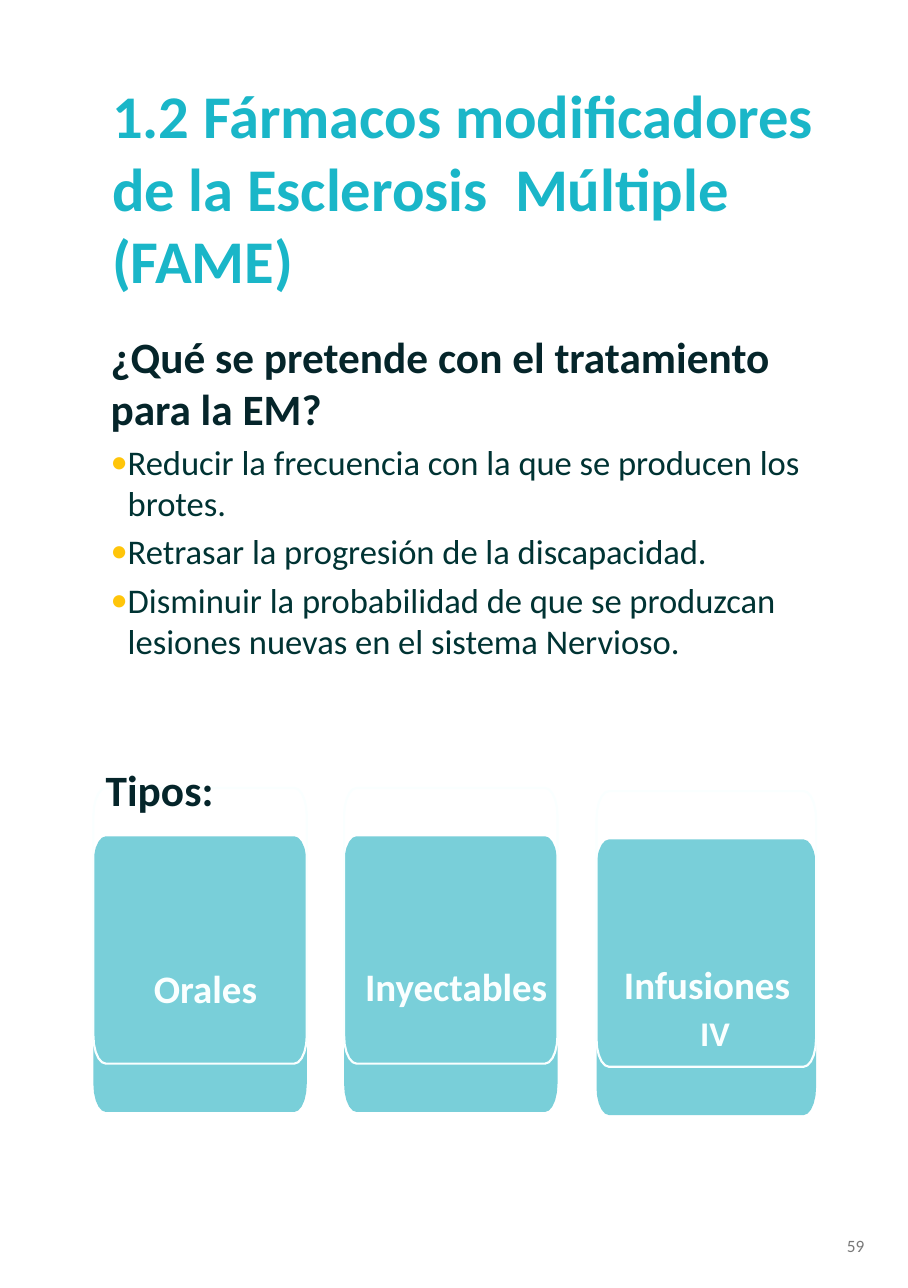
from math import cos, pi, sin

from lxml import etree
from pptx import Presentation
from pptx.dml.color import RGBColor
from pptx.enum.text import MSO_ANCHOR, MSO_AUTO_SIZE, PP_ALIGN
from pptx.oxml.ns import qn
from pptx.util import Inches, Pt

LEFT, CENTER, RIGHT = PP_ALIGN.LEFT, PP_ALIGN.CENTER, PP_ALIGN.RIGHT
TOP, MIDDLE = MSO_ANCHOR.TOP, MSO_ANCHOR.MIDDLE
FIXED = MSO_AUTO_SIZE.NONE

FONT = "Calibri"
TEAL, AQUA, PALE = "1AB6C8", "79CFD9", "FAFFFF"
DARK, GREEN, GOLD, GRAY = "05252A", "003333", "FFC50A", "797979"

TITLE = "1.2 Fármacos modificadores de la Esclerosis  Múltiple (FAME)"
ASK = "¿Qué se pretende con el tratamiento para la EM?"
GOALS = [
    "Reducir la frecuencia con la que se producen los brotes.",
    "Retrasar la progresión de la discapacidad.",
    "Disminuir la probabilidad de que se produzcan lesiones nuevas en el sistema Nervioso.",
]
KINDS = "Tipos:"
PAGE = "59"

# left, top, width of the card; centre and top of its label; label lines
CARDS = [
    (0.6, 5.37, 1.37, 1.32, 6.19, ["Orales"]),
    (2.21, 5.37, 1.37, 2.93, 6.18, ["Inyectables"]),
    (3.83, 5.39, 1.41, 4.54, 6.17, ["Infusiones", "IV"]),
]
CARD_H, RISE = 1.77, 0.31
CURVE_X, CURVE_Y, STEPS = 0.08, 0.18, 5
LABEL_W, LABEL_H = 1.6, 0.31


def color(code):
    return RGBColor.from_string(code)


def setup(shape, box, insets=(0, 0, 0, 0), anchor=TOP):
    """Place a text shape and return its frame."""
    shape.left, shape.top, shape.width, shape.height = map(Inches, box)
    frame = shape.text_frame
    frame.word_wrap = True
    frame.auto_size = FIXED
    frame.vertical_anchor = anchor
    (frame.margin_left, frame.margin_top,
     frame.margin_right, frame.margin_bottom) = map(Inches, insets)
    return frame


def write(para, text, size, code, bold=False, align=LEFT, before=0):
    para.text = text
    para.alignment = align
    para.space_before = Pt(before)
    para.line_spacing = 1.0
    for run in para.runs:
        font = run.font
        font.name, font.size, font.bold = FONT, Pt(size), bold
        font.color.rgb = color(code)


def indent(para, left, first=0):
    props = para._p.get_or_add_pPr()
    props.set("marL", str(Inches(left)))
    props.set("indent", str(Inches(first)))
    return props


def bullet(para):
    props = indent(para, 0.12, -0.11)
    tint = etree.SubElement(props, qn("a:buClr"))
    etree.SubElement(tint, qn("a:srgbClr"), val=GOLD)
    etree.SubElement(props, qn("a:buFont"), typeface=FONT)
    etree.SubElement(props, qn("a:buChar"), char="•")


def panel(shapes, left, top, width):
    """Draw a card outline with elliptical corners."""
    corners = [
        (left + width - CURVE_X, top + CARD_H - CURVE_Y),
        (left + CURVE_X, top + CARD_H - CURVE_Y),
        (left + CURVE_X, top + CURVE_Y),
        (left + width - CURVE_X, top + CURVE_Y),
    ]
    points = []
    for turn, (x, y) in enumerate(corners):
        for step in range(STEPS + 1):
            angle = (turn + step / STEPS) * pi / 2
            points.append((Inches(x + CURVE_X * cos(angle)),
                           Inches(y + CURVE_Y * sin(angle))))
    pen = shapes.build_freeform(*points[0])
    pen.add_line_segments(points[1:], close=True)
    shape = pen.convert_to_shape()
    shape.shadow.inherit = False
    return shape


def card(shapes, left, top, width, mid, label_top, lines):
    base = panel(shapes, left, top, width)
    base.fill.solid()
    base.fill.fore_color.rgb = color(AQUA)
    base.line.fill.background()

    edge = panel(shapes, left, top - RISE, width)
    edge.fill.background()
    edge.line.color.rgb = color(PALE)
    edge.line.width = Pt(1)

    box = (mid - LABEL_W / 2, label_top, LABEL_W, LABEL_H * len(lines))
    frame = setup(shapes.add_textbox(0, 0, 0, 0), box)
    write(frame.paragraphs[0], lines[0], 18, PALE, True, CENTER)
    for line in lines[1:]:
        para = frame.add_paragraph()
        write(para, line, 16, PALE, True, CENTER, 1.8)
        indent(para, 0.1)


def main():
    deck = Presentation()
    deck.slide_width, deck.slide_height = Inches(5.83), Inches(8.27)
    slide = deck.slides.add_slide(deck.slide_layouts[1])
    shapes = slide.shapes
    title, body = shapes.title, slide.placeholders[1]

    frame = setup(title, (0.72, 0.44, 4.66, 1.48), (0, 0.06, 0, 0))
    write(frame.paragraphs[0], TITLE, 28, TEAL, True, before=4.6)

    frame = setup(body, (0.7, 2.06, 4.66, 2.52), (0, 0.06, 0, 0))
    ask = frame.paragraphs[0]
    write(ask, ASK, 20, DARK, True, before=4.3)
    etree.SubElement(indent(ask, 0.01), qn("a:buNone"))
    for goal in GOALS:
        para = frame.add_paragraph()
        write(para, goal, 16, GREEN, before=3.1)
        bullet(para)

    for item in CARDS:
        card(shapes, *item)

    pad = (0.1, 0.05, 0.1, 0.05)
    frame = setup(shapes.add_textbox(0, 0, 0, 0), (0.58, 4.85, 2.92, 0.44), pad)
    write(frame.paragraphs[0], KINDS, 20, DARK, True, before=2.8)

    frame = setup(shapes.add_textbox(0, 0, 0, 0), (4.34, 7.78, 1.31, 0.44), pad, MIDDLE)
    write(frame.paragraphs[0], PAGE, 8, GRAY, align=RIGHT)

    deck.save("out.pptx")


if __name__ == "__main__":
    main()
